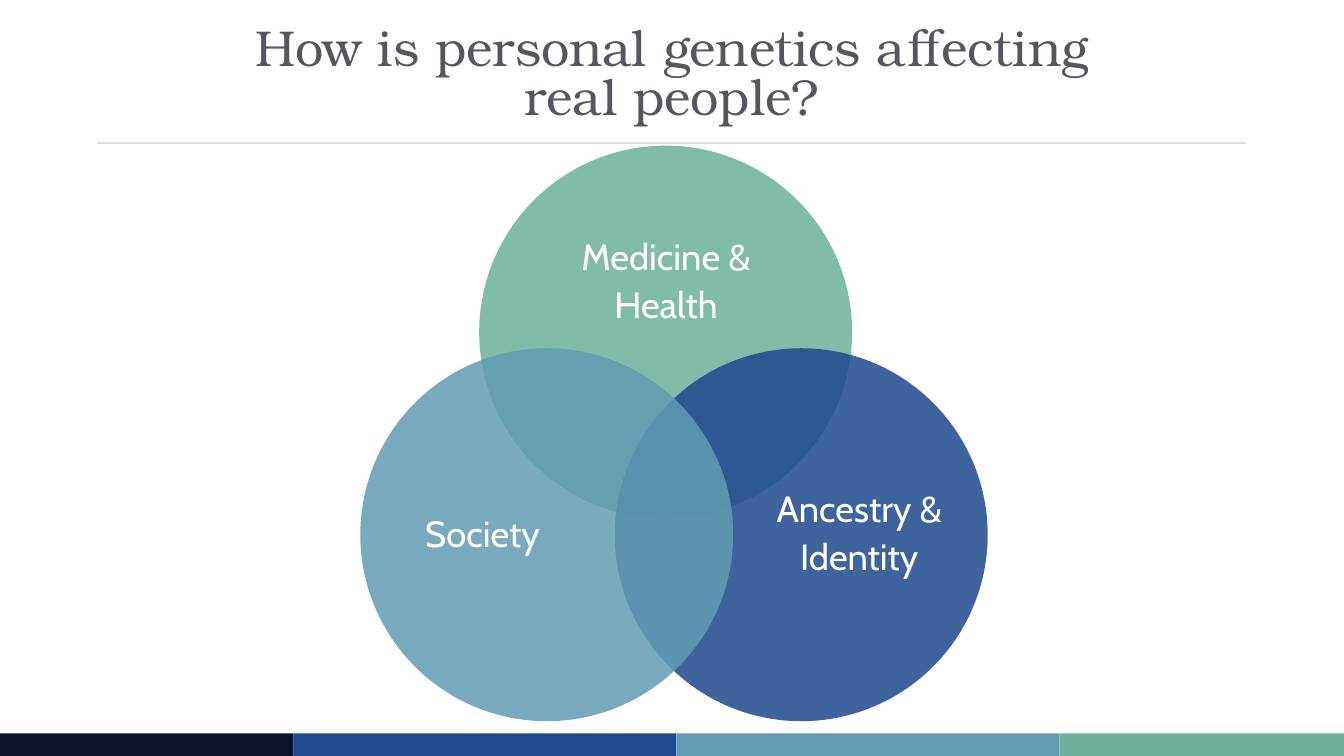
"""Build the slide on personal genetics with a three-circle Venn diagram."""
from lxml.etree import SubElement
from pptx import Presentation
from pptx.dml.color import RGBColor
from pptx.enum.shapes import MSO_CONNECTOR, MSO_SHAPE
from pptx.enum.text import MSO_ANCHOR, PP_ALIGN
from pptx.oxml.ns import qn
from pptx.util import Inches, Pt

NAVY, BLUE, TEAL, GREEN = "0C1229", "1E498C", "629CB2", "6CB199"


def add_filled(kind, x, y, w, h, color):
    sp = s.shapes.add_shape(kind, Inches(x), Inches(y), Inches(w), Inches(h))
    sp.shadow.inherit = False
    sp.fill.solid()
    sp.fill.fore_color.rgb = RGBColor.from_string(color)
    sp.line.fill.background()
    return sp


def add_text(x, y, w, h, text, font, size, color, spacing, anchor):
    tf = s.shapes.add_textbox(Inches(x), Inches(y), Inches(w), Inches(h)).text_frame
    tf.word_wrap = True
    tf.vertical_anchor = anchor
    tf.margin_left = tf.margin_right = tf.margin_top = tf.margin_bottom = 0
    p = tf.paragraphs[0]
    p.text = text
    p.alignment = PP_ALIGN.CENTER
    p.line_spacing = spacing
    p.font.name = font
    p.font.size = Pt(size)
    p.font.color.rgb = RGBColor.from_string(color)


prs = Presentation()
prs.slide_width, prs.slide_height = Inches(26.67), Inches(15)
s = prs.slides.add_slide(prs.slide_layouts[6])

rule = s.shapes.add_connector(MSO_CONNECTOR.STRAIGHT, Inches(1.92), Inches(2.83), Inches(24.72), Inches(2.83))
rule.line.color.rgb = RGBColor.from_string("DCDEE0")
rule.line.width = Pt(3)
SubElement(rule._element.spPr, qn("a:effectLst"))

edges = [0, 5.82, 13.42, 21.02, 26.67]
for left, right, color in zip(edges, edges[1:], [NAVY, BLUE, TEAL, GREEN]):
    add_filled(MSO_SHAPE.RECTANGLE, left, 14.55, right - left, 0.45, color)

add_text(5.04, 0.44, 16.58, 2.15, "How is personal genetics affecting real people?",
         "TeX Gyre Bonum", 72, "53585F", 0.8, MSO_ANCHOR.MIDDLE)

circles = [
    (9.51, 2.89, GREEN, "Medicine & Health", (11.44, 4.56, 3.55, 2.14)),
    (12.2, 6.91, BLUE, "Ancestry & Identity", (15.08, 9.55, 3.94, 2.14)),
    (7.15, 6.91, TEAL, "Society", (7.8, 10.05, 3.55, 1.13)),
]
for x, y, color, label, box in circles:
    sp = add_filled(MSO_SHAPE.OVAL, x, y, 7.4, 7.4, color)
    clr = sp._element.spPr.find(qn("a:solidFill")).find(qn("a:srgbClr"))
    SubElement(clr, qn("a:alpha"), val="85000")
    add_text(*box, label, "Cabin", 52, "FFFFFF", 1.1, MSO_ANCHOR.TOP)

prs.save("out.pptx")
